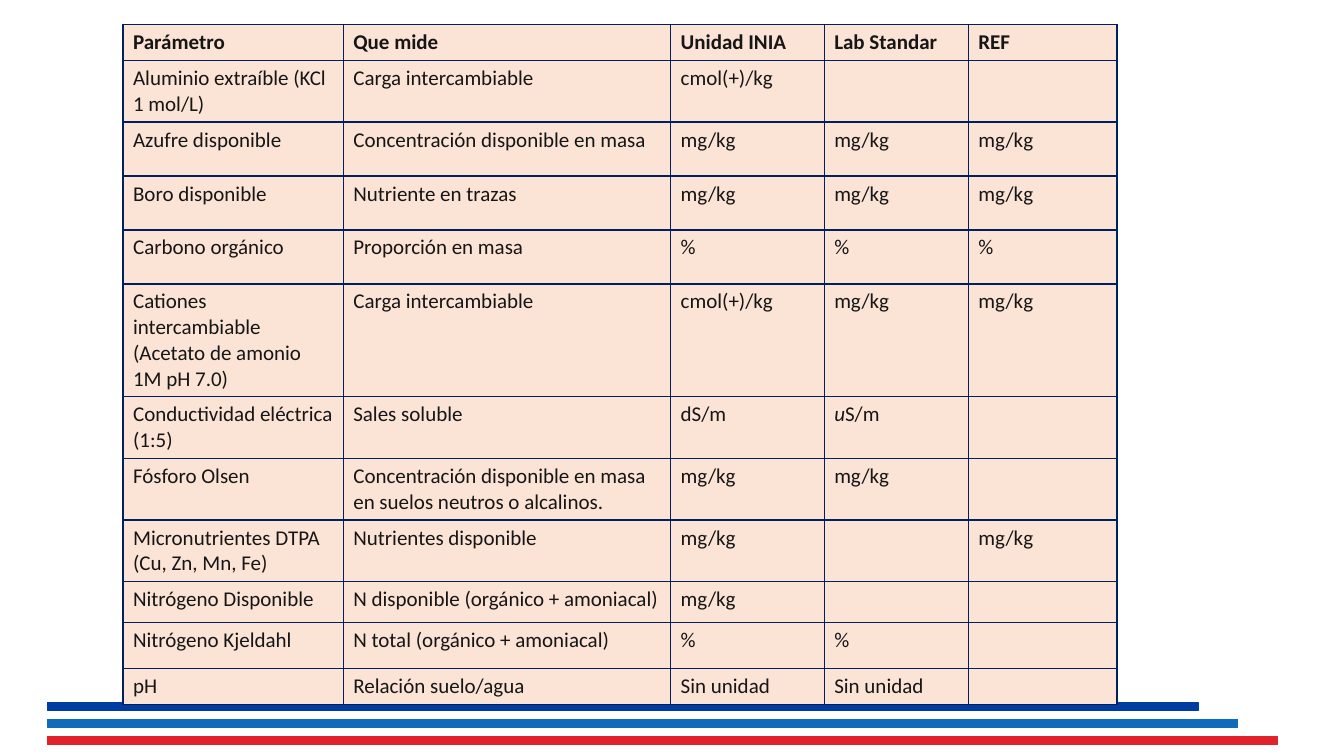
import pptx
import pptx.dml.color
import pptx.enum.shapes
import pptx.oxml
import pptx.oxml.ns
import pptx.util
from lxml import etree

Cm = pptx.util.Cm
Pt = pptx.util.Pt
RGBColor = pptx.dml.color.RGBColor

INK = RGBColor(0x16, 0x16, 0x16)
PEACH = RGBColor(0xFB, 0xE3, 0xD6)
NAVY = RGBColor(0x00, 0x20, 0x60)
DARK_BLUE = RGBColor(0x01, 0x3C, 0xA3)
BLUE = RGBColor(0x10, 0x6C, 0xB8)
RED = RGBColor(0xE0, 0x23, 0x2A)

FONT, FONT_SIZE = "Calibri", 15
ITALIC_UNIT = "uS/m"  # its first letter is italic

ROWS = [
    ("Parámetro", "Que mide", "Unidad INIA", "Lab Standar", "REF"),
    ("Aluminio extraíble (KCl 1 mol/L)", "Carga intercambiable", "cmol(+)/kg", "", ""),
    ("Azufre disponible", "Concentración disponible en masa", "mg/kg", "mg/kg", "mg/kg"),
    ("Boro disponible", "Nutriente en trazas", "mg/kg", "mg/kg", "mg/kg"),
    ("Carbono orgánico", "Proporción en masa", "%", "%", "%"),
    ("Cationes intercambiable (Acetato de amonio 1M pH 7.0)", "Carga intercambiable",
     "cmol(+)/kg", "mg/kg", "mg/kg"),
    ("Conductividad eléctrica (1:5)", "Sales soluble", "dS/m", ITALIC_UNIT, ""),
    ("Fósforo Olsen", "Concentración disponible en masa en suelos neutros o alcalinos.",
     "mg/kg", "mg/kg", ""),
    ("Micronutrientes DTPA (Cu, Zn, Mn, Fe)", "Nutrientes disponible", "mg/kg", "", "mg/kg"),
    ("Nitrógeno Disponible", "N disponible (orgánico + amoniacal)", "mg/kg", "", ""),
    ("Nitrógeno Kjeldahl", "N total (orgánico + amoniacal)", "%", "%", ""),
    ("pH", "Relación suelo/agua", "Sin unidad", "Sin unidad", ""),
]
# Lengths in centimetres
COLUMN_WIDTHS = [5.55, 8.25, 3.87, 3.63, 3.75]
ROW_HEIGHTS = [0.9, 1.5, 1.36, 1.36, 1.36, 2.76, 1.5, 1.5, 1.5, 1.04, 1.15, 0.9]
TABLE_LEFT, TABLE_TOP = 3.1, 0.62
BARS = [(29.0, DARK_BLUE), (30.0, BLUE), (31.0, RED)]
BAR_LEFT, BAR_TOP, BAR_HEIGHT, BAR_STEP = 1.19, 17.7, 0.2, 0.43


def add_bars(page):
    for index, (width, color) in enumerate(BARS):
        bar = page.shapes.add_shape(
            pptx.enum.shapes.MSO_SHAPE.FLOWCHART_PROCESS,
            Cm(BAR_LEFT), Cm(BAR_TOP + index * BAR_STEP), Cm(width), Cm(BAR_HEIGHT))
        bar.shadow.inherit = False
        bar.fill.solid()
        bar.fill.fore_color.rgb = color
        bar.line.color.rgb = color
        bar.line.width = Pt(0.85)


def add_borders(cell):
    """Draw the four edges; they must come before the cell's fill."""
    properties = cell._tc.get_or_add_tcPr()
    for edge in ("lnL", "lnR", "lnT", "lnB"):
        line = etree.SubElement(properties, pptx.oxml.ns.qn("a:" + edge), w=str(Pt(1)))
        fill = etree.SubElement(line, pptx.oxml.ns.qn("a:solidFill"))
        etree.SubElement(fill, pptx.oxml.ns.qn("a:srgbClr"), val=str(NAVY))


def fill_cell(cell, text, bold):
    add_borders(cell)
    cell.fill.solid()
    cell.fill.fore_color.rgb = PEACH
    para = cell.text_frame.paragraphs[0]
    para.font.name = FONT
    para.font.size = Pt(FONT_SIZE)
    para.font.bold = bold
    para.font.color.rgb = INK
    if text == ITALIC_UNIT:
        for part, italic in ((text[:1], True), (text[1:], False)):
            span = para.add_run()
            span.text = part
            span.font.italic = italic
    elif text:
        para.add_run().text = text
    else:  # an empty cell needs its own size to keep the row low
        etree.SubElement(para._p, pptx.oxml.ns.qn("a:endParaRPr"), sz=str(FONT_SIZE * 100))


def add_parameter_table(page):
    frame = page.shapes.add_table(
        len(ROWS), len(COLUMN_WIDTHS), Cm(TABLE_LEFT), Cm(TABLE_TOP),
        Cm(sum(COLUMN_WIDTHS)), Cm(sum(ROW_HEIGHTS)))
    table = frame.table
    table.horz_banding = False
    for column, width in zip(table.columns, COLUMN_WIDTHS):
        column.width = Cm(width)
    for index, (row, height, texts) in enumerate(zip(table.rows, ROW_HEIGHTS, ROWS)):
        row.height = Cm(height)
        for cell, text in zip(row.cells, texts):
            fill_cell(cell, text, bold=index == 0)


def main():
    deck = pptx.Presentation()
    deck.slide_width, deck.slide_height = Cm(33.87), Cm(19.05)
    page = deck.slides.add_slide(deck.slide_layouts[6])
    add_bars(page)
    add_parameter_table(page)
    deck.save("out.pptx")


if __name__ == "__main__":
    main()
